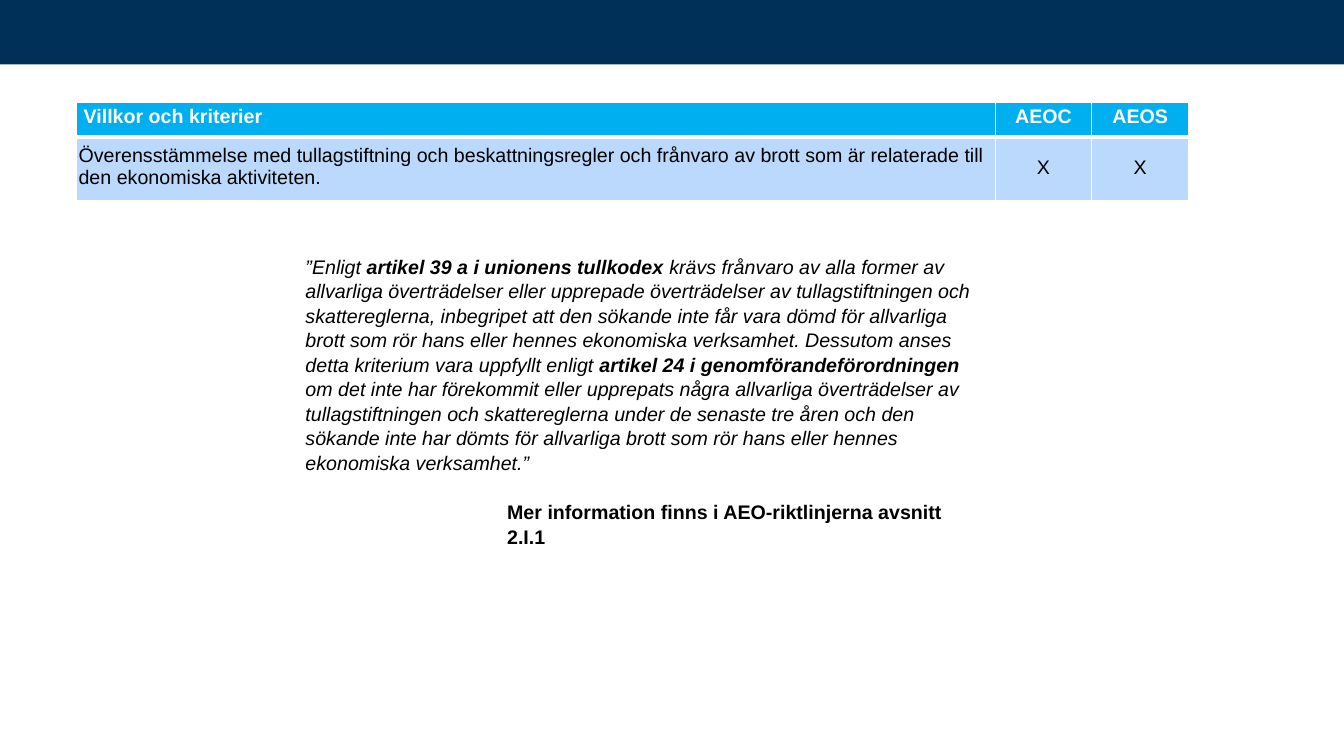
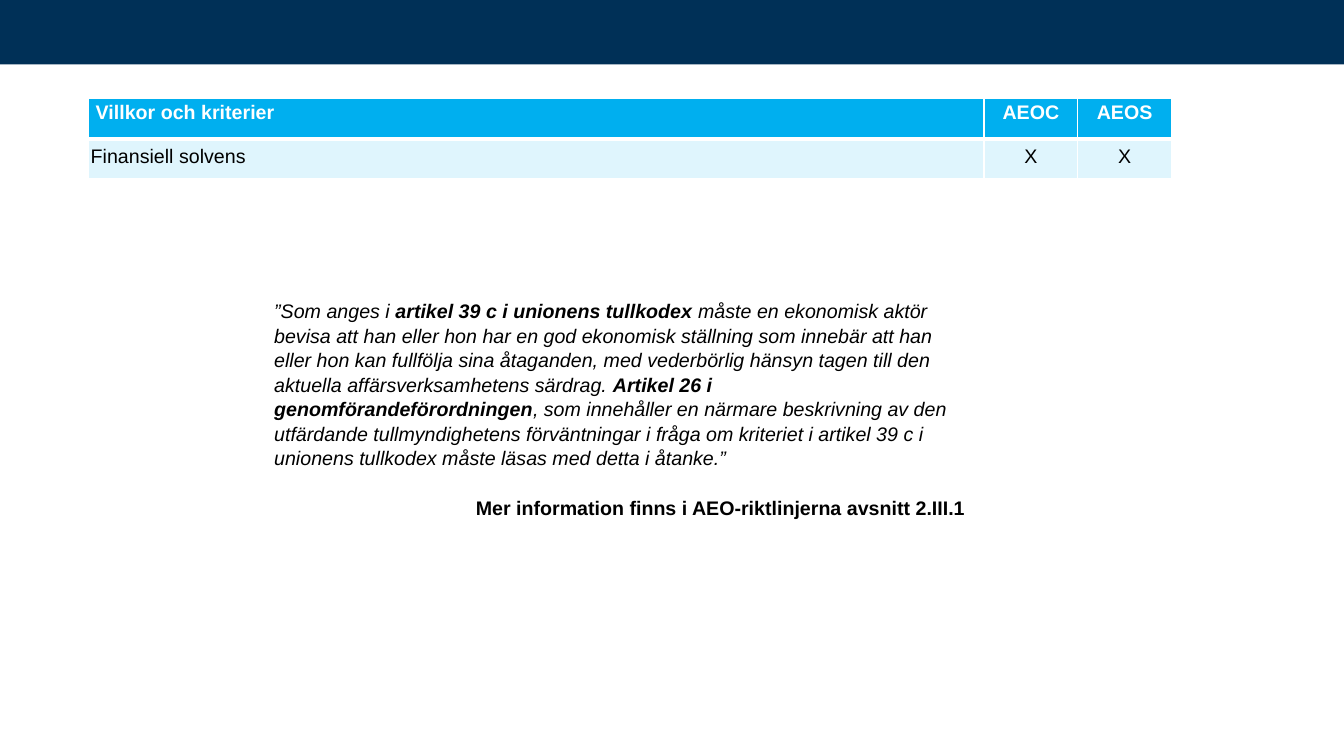
from lxml import etree
from pptx import Presentation
from pptx.dml.color import RGBColor
from pptx.enum.shapes import MSO_SHAPE
from pptx.enum.text import MSO_ANCHOR, PP_ALIGN
from pptx.oxml.ns import qn
from pptx.util import Inches, Pt

RECT = MSO_SHAPE.RECTANGLE
TOP = MSO_ANCHOR.TOP
LEFT, CENTER = PP_ALIGN.LEFT, PP_ALIGN.CENTER

# Shared look
SLIDE_W, SLIDE_H, BAND_H = 13.33, 7.5, 0.64
NAVY, CYAN, WHITE, BLACK = "003057", "00AFEF", "FFFFFF", "000000"
BODY = {"name": "Arial", "size": Pt(14), "bold": False, "italic": False}
BOLD = {**BODY, "bold": True}
QUOTE = {**BODY, "italic": True}
QUOTE_BOLD = {**QUOTE, "bold": True}
HEADINGS = ["Villkor och kriterier", "AEOC", "AEOS"]
NOTE = "Mer information finns i AEO-riktlinjerna avsnitt "

SLIDES = [
    {
        "table": {
            "at": (0.76, 1.02), "cols": (9.11, 0.96, 0.96), "rows": (0.34, 0.63),
            "fill": "BAD9FC", "insets": (0.08, 0.19),
            "criterion": "Överensstämmelse med tullagstiftning och beskattningsregler "
                         "och frånvaro av brott som är relaterade till den ekonomiska "
                         "aktiviteten.",
        },
        "box": (3.02, 2.51, 6.75, 2.6),
        "quote": [
            ("”Enligt ", QUOTE),
            ("artikel 39 a i unionens tullkodex ", QUOTE_BOLD),
            ("krävs frånvaro av alla former av allvarliga överträdelser eller "
             "upprepade överträdelser av tullagstiftningen och skattereglerna, "
             "inbegripet att den sökande inte får vara dömd för allvarliga brott "
             "som rör hans eller hennes ekonomiska verksamhet. Dessutom anses "
             "detta kriterium vara uppfyllt enligt ", QUOTE),
            ("artikel 24 i genomförandeförordningen ", QUOTE_BOLD),
            ("om det inte har förekommit eller upprepats några allvarliga "
             "överträdelser av tullagstiftningen och skattereglerna under de "
             "senaste tre åren och den sökande inte har dömts för allvarliga "
             "brott som rör hans eller hennes ekonomiska verksamhet.”", QUOTE),
        ],
        "section": "2.I.1",
    },
    {
        "table": {
            "at": (0.88, 0.98), "cols": (8.88, 0.93, 0.93), "rows": (0.4, 0.39),
            "fill": "DFF5FD", "insets": (0.07, 0.07),
            "criterion": "Finansiell solvens",
        },
        "box": (2.71, 2.95, 6.94, 2.13),
        "quote": [
            ("”Som anges i ", QUOTE),
            ("artikel 39 c i unionens tullkodex ", QUOTE_BOLD),
            ("måste en ekonomisk aktör bevisa att han eller hon har en god "
             "ekonomisk ställning som innebär att han eller hon kan fullfölja "
             "sina åtaganden, med vederbörlig hänsyn tagen till den aktuella "
             "affärsverksamhetens särdrag. ", QUOTE),
            ("Artikel 26 i genomförandeförordningen", QUOTE_BOLD),
            (", som innehåller en närmare beskrivning av den utfärdande "
             "tullmyndighetens förväntningar i fråga om kriteriet i artikel 39 c "
             "i unionens tullkodex måste läsas med detta i åtanke.”", QUOTE),
        ],
        "section": "2.III.1",
    },
]


def rgb(value):
    return RGBColor.from_string(value)


def set_attrs(obj, values):
    for name, value in values.items():
        setattr(obj, name, value)


def add_run(p, text, style, color=BLACK):
    r = p.add_run()
    r.text = text
    set_attrs(r.font, style)
    r.font.color.rgb = rgb(color)


def add_band(s):
    sp = s.shapes.add_shape(RECT, 0, 0, Inches(SLIDE_W), Inches(BAND_H))
    sp.shadow.inherit = False
    sp.fill.solid()
    sp.fill.fore_color.rgb = rgb(NAVY)
    sp.line.fill.background()


def add_borders(cell, widths):
    tc_pr = cell._tc.get_or_add_tcPr()
    for side, width in widths.items():
        ln = etree.SubElement(tc_pr, qn(f"a:ln{side}"), w=str(Pt(width)))
        fill = etree.SubElement(ln, qn("a:solidFill"))
        etree.SubElement(fill, qn("a:srgbClr"), val=WHITE)


def format_cell(cell, text, style, color, fill, inset, indent, align, borders):
    set_attrs(cell, {
        "margin_left": Inches(indent), "margin_right": 0,
        "margin_top": Inches(inset), "margin_bottom": 0,
        "vertical_anchor": TOP,
    })
    add_borders(cell, borders)
    cell.fill.solid()
    cell.fill.fore_color.rgb = rgb(fill)
    p = cell.text_frame.paragraphs[0]
    p.alignment = align
    add_run(p, text, style, color)


def add_criteria_table(s, at, cols, rows, fill, insets, criterion):
    x, y = at
    frame = s.shapes.add_table(len(rows), len(cols), Inches(x), Inches(y),
                               Inches(sum(cols)), Inches(sum(rows)))
    table = frame.table
    table.horz_banding = False
    for column, width in zip(table.columns, cols):
        column.width = Inches(width)
    for row, height in zip(table.rows, rows):
        row.height = Inches(height)

    # A thick white rule parts the heading row from the criterion
    head_rule = {"L": 1, "R": 1, "T": 1, "B": 3}
    body_rule = {"L": 1, "R": 1, "T": 3, "B": 1}
    text_inset, mark_inset = insets
    for c, (heading, value) in enumerate(zip(HEADINGS, [criterion, "X", "X"])):
        first = c == 0
        align = LEFT if first else CENTER
        format_cell(table.cell(0, c), heading, BOLD, WHITE, CYAN, 0.03,
                    0.07 if first else 0, align, head_rule)
        format_cell(table.cell(1, c), value, BODY, BLACK, fill,
                    text_inset if first else mark_inset,
                    0.02 if first else 0, align, body_rule)


def add_quote(s, box, quote, section):
    tf = s.shapes.add_textbox(*map(Inches, box)).text_frame
    set_attrs(tf, {
        "word_wrap": True, "vertical_anchor": TOP,
        "margin_left": Inches(0.01), "margin_right": 0,
        "margin_top": Inches(0.01), "margin_bottom": 0,
    })
    p = tf.paragraphs[0]
    p.line_spacing = 1.04
    for text, style in quote:
        add_run(p, text, style)

    # Indented reference below the quotation
    p = tf.add_paragraph()
    p._p.get_or_add_pPr().set("marL", str(Inches(2)))
    set_attrs(p, {"line_spacing": 1.04, "space_before": Pt(18)})
    add_run(p, NOTE + section, BOLD)


def main():
    prs = Presentation()
    prs.slide_width, prs.slide_height = Inches(SLIDE_W), Inches(SLIDE_H)
    for content in SLIDES:
        s = prs.slides.add_slide(prs.slide_layouts[6])
        add_band(s)
        add_criteria_table(s, **content["table"])
        add_quote(s, content["box"], content["quote"], content["section"])
    prs.save("out.pptx")


if __name__ == "__main__":
    main()
